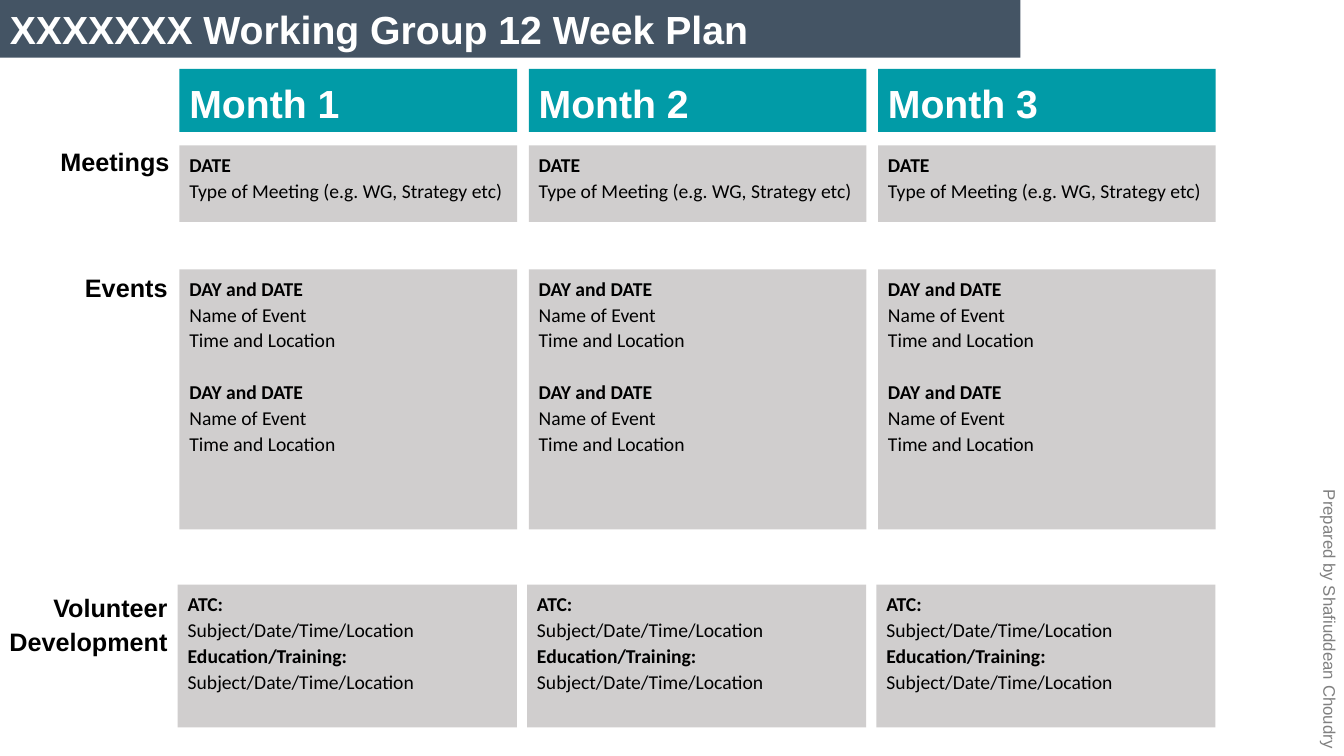
import pptx
import pptx.util
import pptx.dml.color
import pptx.enum.shapes
import pptx.enum.text

Pt = pptx.util.Pt
ALIGN = pptx.enum.text.PP_ALIGN
ANCHOR = pptx.enum.text.MSO_ANCHOR

COLORS = {"title": "445464", "month": "019BA7", "cell": "D0CECE",
          "white": "FFFFFF", "black": "000000", "credit": "808080"}

TITLE = "XXXXXXX Working Group 12 Week Plan"
CREDIT = "Prepared by Shafiuddean Choudry"
MONTHS = ["Month 1", "Month 2", "Month 3"]

MEETING = ["DATE", "Type of Meeting (e.g. WG, Strategy etc)"]
EVENT = ["DAY and DATE", "Name of Event", "Time and Location"]
TRAINING = ["ATC:", "Subject/Date/Time/Location",
            "Education/Training:", "Subject/Date/Time/Location"]
BOLD_LINES = {"DATE", "DAY and DATE", "ATC:", "Education/Training:"}

# label lines, label box (left, top, height), cell lines,
# cell box (offset from column, top, width, height)
ROWS = [
    (["Meetings"], (0, 98.64, 34.56), MEETING, (0, 103.9, 241.2, 54.7)),
    (["Events"], (-1.44, 188.64, 34.56), EVENT * 2, (0, 192.4, 241.2, 185.8)),
    (["Volunteer", "Development"], (-1.44, 417.6, 54.72), TRAINING,
     (-1.2, 417.6, 242.2, 102)),
]

FIRST_COLUMN = 128.2
COLUMN_STEP = 249.5
LABEL_WIDTH = 128.2
MONTH_TOP, MONTH_WIDTH, MONTH_HEIGHT = 49.2, 241.2, 45.1
EVENT_GAP = 18.6

presentation = pptx.Presentation()
presentation.slide_width = Pt(960)
presentation.slide_height = Pt(540)
slide = presentation.slides.add_slide(presentation.slide_layouts[6])


def color(name):
    return pptx.dml.color.RGBColor.from_string(COLORS[name])


def write(shape, lines, size, font, text_color, bold_lines,
          align=ALIGN.LEFT, anchor=ANCHOR.TOP, spacing=1.1):
    """Put one paragraph per line; lines in bold_lines are bold."""
    frame = shape.text_frame
    frame.word_wrap = True
    frame.vertical_anchor = anchor
    frame.text = "\n".join(lines)
    for paragraph in frame.paragraphs:
        paragraph.alignment = align
        paragraph.line_spacing = spacing
        for run in paragraph.runs:
            run.font.size = Pt(size)
            run.font.name = font
            run.font.bold = run.text in bold_lines
            run.font.color.rgb = color(text_color)


def add_block(left, top, width, height, fill):
    shape = slide.shapes.add_shape(pptx.enum.shapes.MSO_SHAPE.RECTANGLE,
                                   Pt(left), Pt(top), Pt(width), Pt(height))
    shape.shadow.inherit = False
    shape.fill.solid()
    shape.fill.fore_color.rgb = color(fill)
    shape.line.fill.background()
    return shape


def add_text_box(left, top, width, height):
    return slide.shapes.add_textbox(Pt(left), Pt(top), Pt(width), Pt(height))


title = add_block(0, 0, 728.9, 41.2, "title")
write(title, [TITLE], 28, "Arial", "white", [TITLE], anchor=ANCHOR.MIDDLE, spacing=1.0)

for label_lines, (left, top, height), _, _ in ROWS:
    label = add_text_box(left, top, LABEL_WIDTH, height)
    write(label, label_lines, 18, "Arial", "black", label_lines, align=ALIGN.RIGHT)

for column, month in enumerate(MONTHS):
    column_left = FIRST_COLUMN + column * COLUMN_STEP
    header = add_block(column_left, MONTH_TOP, MONTH_WIDTH, MONTH_HEIGHT, "month")
    write(header, [month], 28, "Arial", "white", [month], anchor=ANCHOR.MIDDLE)
    for _, _, cell_lines, (offset, top, width, height) in ROWS:
        cell = add_block(column_left + offset, top, width, height, "cell")
        write(cell, cell_lines, 14, "Calibri", "black", BOLD_LINES)
        for paragraph in cell.text_frame.paragraphs[1:]:
            if paragraph.text == EVENT[0]:
                paragraph.space_before = Pt(EVENT_GAP)

credit = add_text_box(835.9, 415.4, 229.7, 23)
credit.rotation = 90
write(credit, [CREDIT], 12, "Arial", "credit", [], align=ALIGN.RIGHT)

presentation.save("out.pptx")
